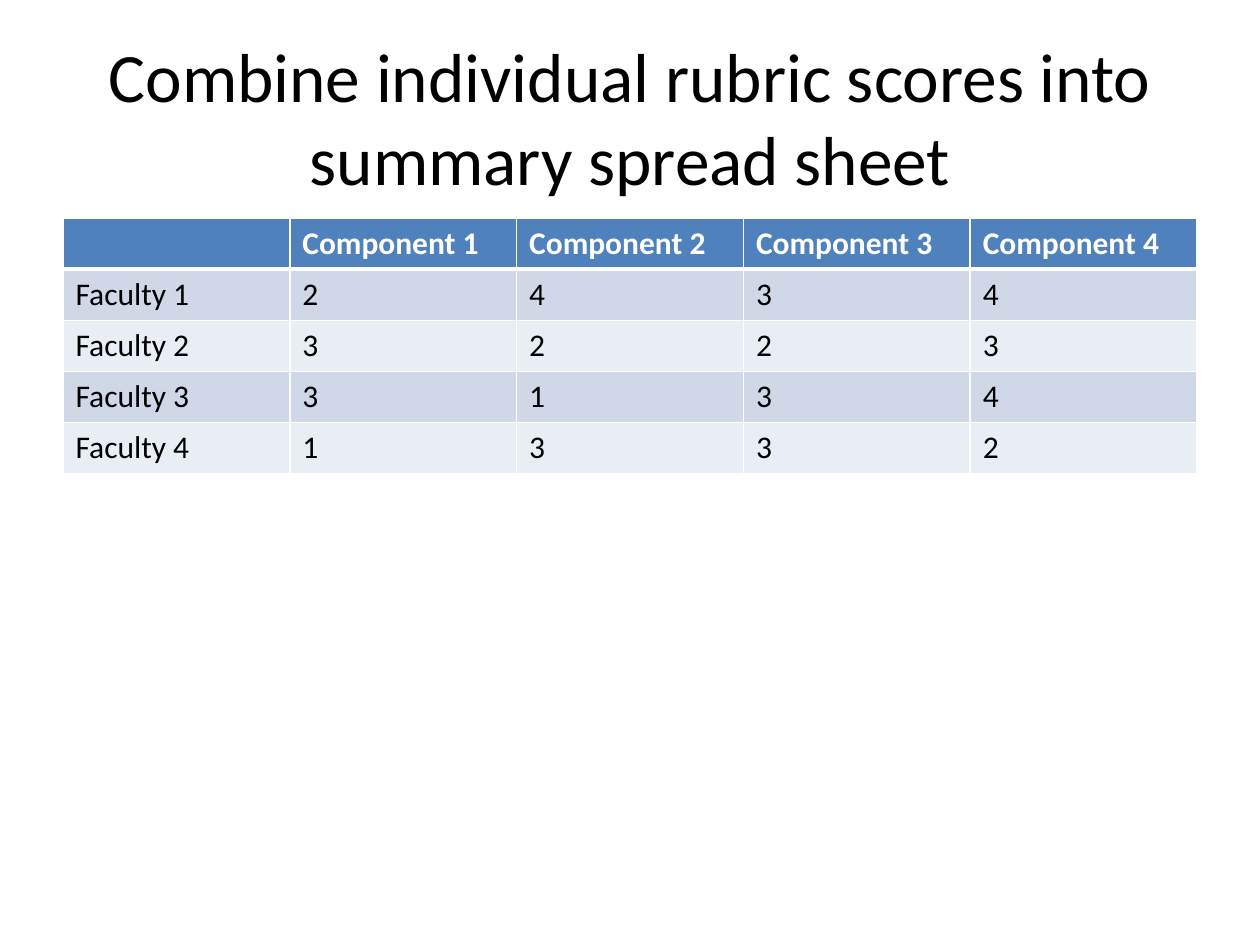
from dataclasses import dataclass

from lxml.etree import SubElement
from pptx import Presentation
from pptx.dml.color import RGBColor as Color
from pptx.enum.text import MSO_ANCHOR as Anchor, PP_ALIGN as Align
from pptx.oxml.ns import qn
from pptx.util import Pt


@dataclass(frozen=True)
class Theme:
    font: str = "Calibri"
    title_size: float = 39.6
    cell_size: float = 18
    ink: str = "000000"
    paper: str = "FFFFFF"
    header: str = "4F81BD"
    bands: tuple = ("D0D8E8", "E9EDF4")
    rule: float = 1
    header_rule: float = 3


THEME = Theme()
LEFT, WIDTH = 36, 648
TABLE_TOP, ROW_HEIGHT = 124.6, 29.2
TITLE = "Combine individual rubric scores into summary spread sheet"
SCORES = [[2, 4, 3, 4], [3, 2, 2, 3], [3, 1, 3, 4], [1, 3, 3, 2]]


def add_span(para, text, size, color, bold=False):
    span = para.add_run()
    span.text = text
    span.font.name = THEME.font
    span.font.size = Pt(size)
    span.font.bold = bold
    span.font.color.rgb = Color.from_string(color)


def add_title(page):
    box = page.shapes.add_textbox(Pt(LEFT), Pt(21.6), Pt(WIDTH), Pt(90))
    frame = box.text_frame
    frame.word_wrap = True
    frame.vertical_anchor = Anchor.MIDDLE
    para = frame.paragraphs[0]
    para.alignment = Align.CENTER
    add_span(para, TITLE, THEME.title_size, THEME.ink)


def set_borders(cell, top, bottom):
    properties = cell._tc.get_or_add_tcPr()
    widths = {"lnL": THEME.rule, "lnR": THEME.rule, "lnT": top, "lnB": bottom}
    for position, (side, width) in enumerate(widths.items()):
        line = SubElement(properties, qn(f"a:{side}"), w=str(Pt(width)))
        fill = SubElement(line, qn("a:solidFill"))
        SubElement(fill, qn("a:srgbClr"), val=THEME.paper)
        properties.insert(position, line)


def style_cell(cell, text, row):
    is_header = row == 0
    fill = THEME.header if is_header else THEME.bands[(row - 1) % 2]
    cell.fill.solid()
    cell.fill.fore_color.rgb = Color.from_string(fill)
    set_borders(
        cell,
        top=THEME.header_rule if row == 1 else THEME.rule,
        bottom=THEME.header_rule if is_header else THEME.rule,
    )
    para = cell.text_frame.paragraphs[0]
    if text:
        color = THEME.paper if is_header else THEME.ink
        add_span(para, text, THEME.cell_size, color, is_header)
    else:
        para.font.size = Pt(THEME.cell_size)


def add_score_table(page):
    header = [""] + [f"Component {number}" for number in range(1, 5)]
    body = [
        [f"Faculty {number}"] + [str(score) for score in scores]
        for number, scores in enumerate(SCORES, 1)
    ]
    rows = [header] + body
    table = page.shapes.add_table(
        len(rows), len(header), Pt(LEFT), Pt(TABLE_TOP),
        Pt(WIDTH), Pt(ROW_HEIGHT * len(rows)),
    ).table
    for column in table.columns:
        column.width = Pt(WIDTH / len(header))
    for row, texts in enumerate(rows):
        table.rows[row].height = Pt(ROW_HEIGHT)
        for column, text in enumerate(texts):
            style_cell(table.cell(row, column), text, row)


def main():
    deck = Presentation()
    deck.slide_width, deck.slide_height = Pt(720), Pt(540)
    page = deck.slides.add_slide(deck.slide_layouts[6])
    add_title(page)
    add_score_table(page)
    deck.save("out.pptx")


if __name__ == "__main__":
    main()
